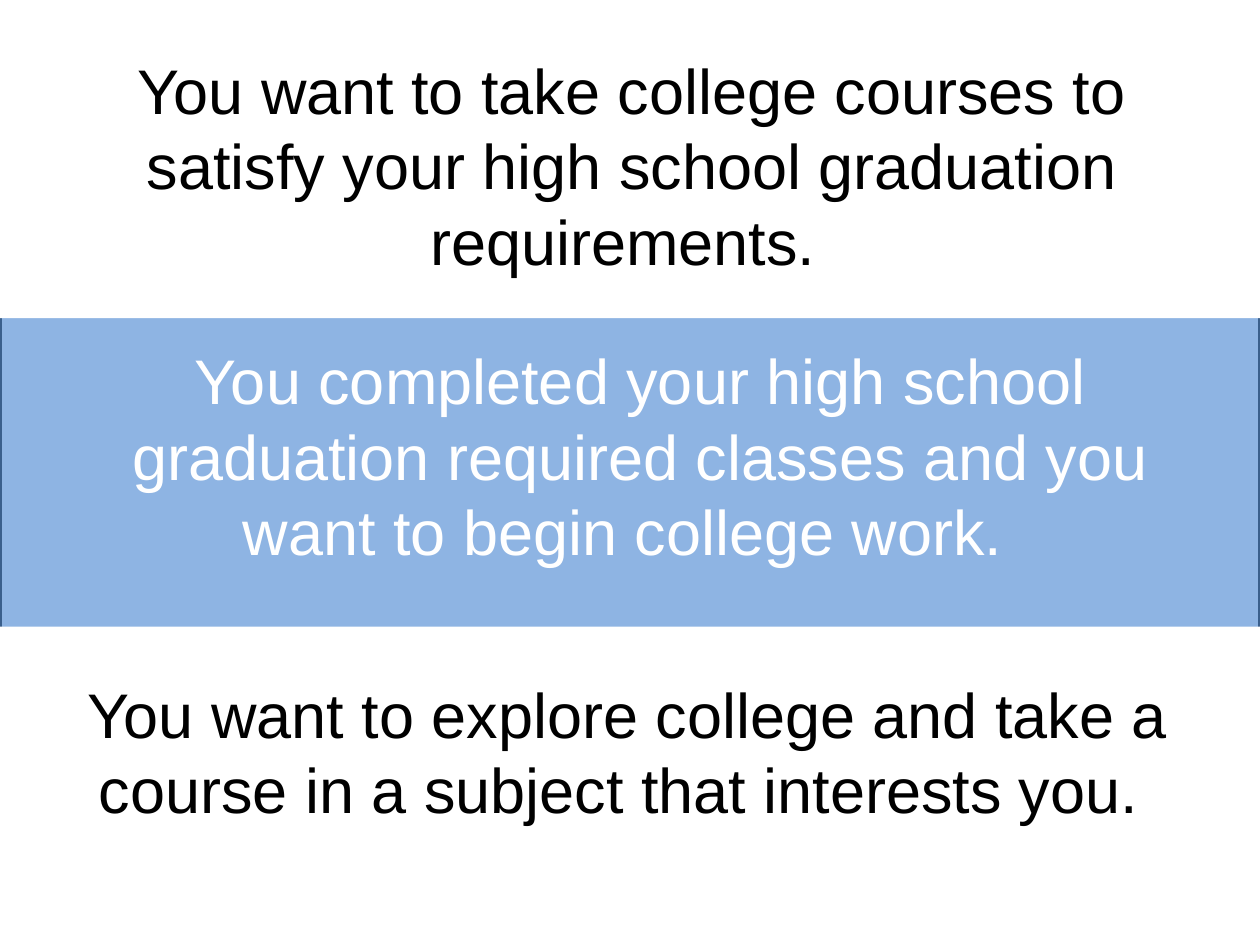
from dataclasses import dataclass
from typing import Optional

from pptx import Presentation
from pptx.dml.color import RGBColor
from pptx.enum.shapes import MSO_SHAPE
from pptx.enum.text import MSO_AUTO_SIZE, PP_ALIGN
from pptx.slide import Slide
from pptx.util import Cm, Pt

RECTANGLE = MSO_SHAPE.RECTANGLE
CENTER = PP_ALIGN.CENTER
FIT_SHAPE = MSO_AUTO_SIZE.SHAPE_TO_FIT_TEXT

SLIDE_WIDTH = 25.4
SLIDE_HEIGHT = 19.05
PANEL_HEIGHT = SLIDE_HEIGHT / 3
EDGE_HEIGHT = 0.13


@dataclass(frozen=True)
class Theme:
    white: RGBColor = RGBColor(0xFF, 0xFF, 0xFF)
    black: RGBColor = RGBColor(0x00, 0x00, 0x00)
    blue: RGBColor = RGBColor(0x8E, 0xB4, 0xE3)
    outline: RGBColor = RGBColor(0x3A, 0x5F, 0x8C)
    font: str = "Arial"
    text_size: float = 36
    outline_width: float = 2


@dataclass(frozen=True)
class Band:
    top: float
    height: float
    fill: RGBColor
    outline: Optional[RGBColor] = None


@dataclass(frozen=True)
class Statement:
    left: float
    top: float
    width: float
    height: float
    text: str
    color: RGBColor


THEME = Theme()

BANDS = [
    Band(0.05, SLIDE_HEIGHT, THEME.blue, THEME.outline),
    Band(0, PANEL_HEIGHT, THEME.white),
    Band(2 * PANEL_HEIGHT, PANEL_HEIGHT, THEME.white),
    Band(PANEL_HEIGHT - EDGE_HEIGHT / 2, EDGE_HEIGHT, THEME.white),
    Band(2 * PANEL_HEIGHT - EDGE_HEIGHT / 2, EDGE_HEIGHT, THEME.white),
]

STATEMENTS = [
    Statement(0.71, 0.91, 24.05, 4.88,
              "You want to take college courses to satisfy your high school "
              "graduation requirements. ", THEME.black),
    Statement(1.17, 6.76, 23.47, 4.88,
              "You completed your high school graduation required classes "
              "and you want to begin college work.  ", THEME.white),
    Statement(-0.05, 13.49, 25.4, 3.33,
              "You want to explore college and take a course in a subject "
              "that interests you. ", THEME.black),
]


def draw_band(slide: Slide, band: Band) -> None:
    shape = slide.shapes.add_shape(
        RECTANGLE, Cm(0), Cm(band.top), Cm(SLIDE_WIDTH), Cm(band.height))
    shape.shadow.inherit = False
    shape.fill.solid()
    shape.fill.fore_color.rgb = band.fill
    if band.outline is None:
        shape.line.fill.background()
    else:
        shape.line.color.rgb = band.outline
        shape.line.width = Pt(THEME.outline_width)


def draw_statement(slide: Slide, statement: Statement) -> None:
    text_box = slide.shapes.add_textbox(
        Cm(statement.left), Cm(statement.top),
        Cm(statement.width), Cm(statement.height))
    text_frame = text_box.text_frame
    text_frame.word_wrap = True
    text_frame.auto_size = FIT_SHAPE
    text_frame.text = statement.text
    paragraph = text_frame.paragraphs[0]
    paragraph.alignment = CENTER
    font = paragraph.runs[0].font
    font.name = THEME.font
    font.size = Pt(THEME.text_size)
    font.color.rgb = statement.color


def main() -> None:
    presentation = Presentation()
    presentation.slide_width = Cm(SLIDE_WIDTH)
    presentation.slide_height = Cm(SLIDE_HEIGHT)
    slide = presentation.slides.add_slide(presentation.slide_layouts[6])
    for band in BANDS:
        draw_band(slide, band)
    for statement in STATEMENTS:
        draw_statement(slide, statement)
    presentation.save("out.pptx")


if __name__ == "__main__":
    main()
